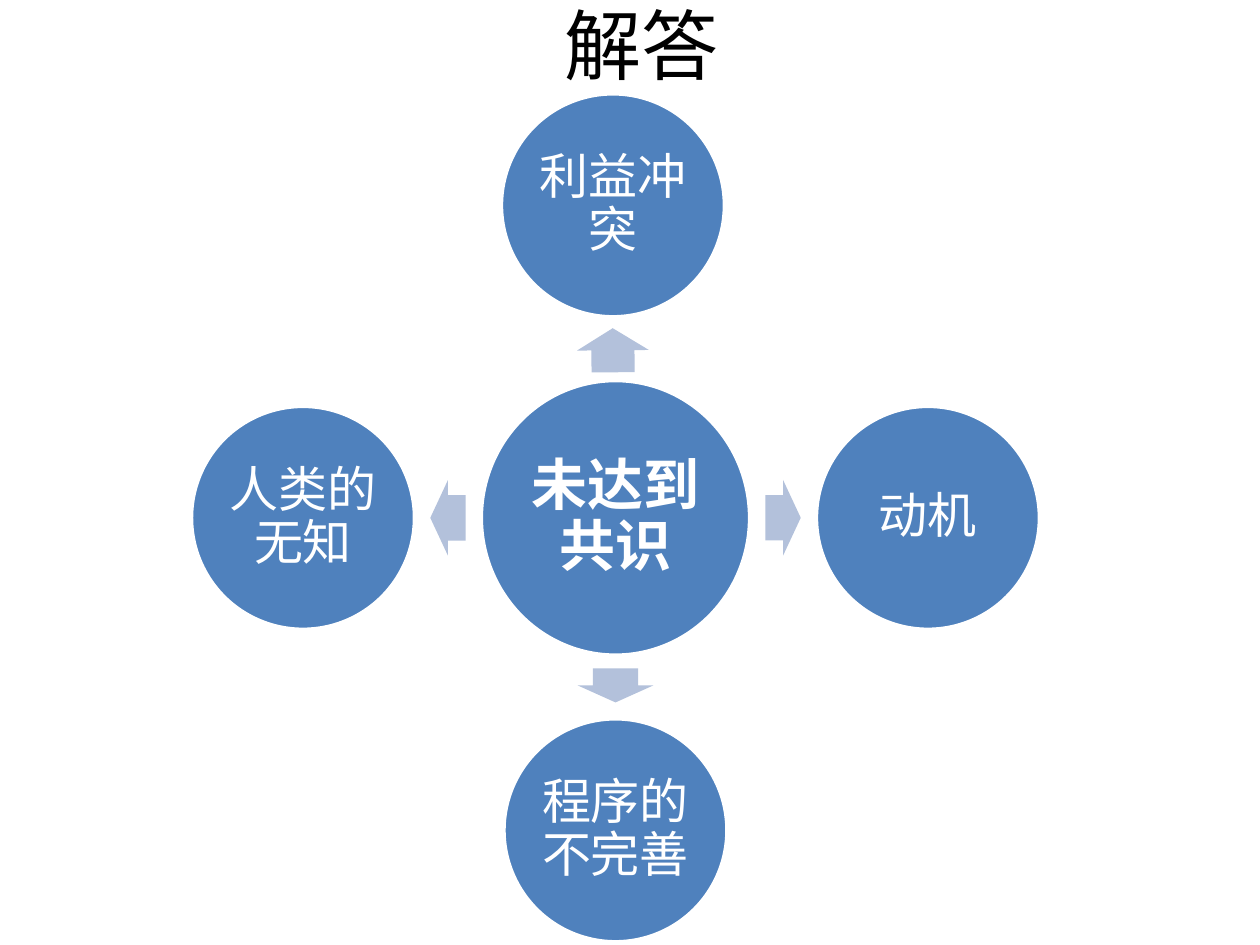
from pptx import Presentation
from pptx import util as u
from pptx.dml.color import RGBColor
from pptx.enum import shapes, text

FONT = "Calibri"
BLUE, PALE_BLUE, WHITE, BLACK = "4F81BD", "B3C1DB", "FFFFFF", "000000"
HUB_X, HUB_Y = 4.885, 4.11
ORBIT, ARROW_ORBIT = 2.48, 1.33
HUB_SIZE, CIRCLE_SIZE = (2.13, 2.18), (1.77, 1.77)

# label, direction x and y, sideways shift, arrow length and width, rotation
SPOKES = [
    ("利益冲突", 0, -1, -0.02, (0.35, 0.57), 269.5),
    ("动机", 1, 0, 0, (0.28, 0.6), 0),
    ("程序的不完善", 0, 1, 0, (0.27, 0.6), 90),
    ("人类的无知", -1, 0, 0, (0.28, 0.6), 180),
]


def color(value):
    return RGBColor.from_string(value)


def write(frame, words, size, font_color, bold=False):
    frame.word_wrap = True
    frame.vertical_anchor = text.MSO_ANCHOR.MIDDLE
    paragraph = frame.paragraphs[0]
    paragraph.alignment = text.PP_ALIGN.CENTER
    run = paragraph.add_run()
    run.text = words
    run.font.name = FONT
    run.font.size = u.Pt(size)
    run.font.bold = bold
    run.font.color.rgb = color(font_color)
    return paragraph


def add_centered(slide, kind, x, y, size, fill):
    """Add a preset shape whose middle is at x, y."""
    width, height = size
    shape = slide.shapes.add_shape(
        kind, u.Inches(x - width / 2), u.Inches(y - height / 2),
        u.Inches(width), u.Inches(height))
    shape.shadow.inherit = False
    shape.fill.solid()
    shape.fill.fore_color.rgb = color(fill)
    return shape


def add_circle(slide, x, y, size, words, font_size, bold=False):
    circle = add_centered(slide, shapes.MSO_SHAPE.OVAL, x, y, size, BLUE)
    circle.line.color.rgb = color(WHITE)
    circle.line.width = u.Pt(2)
    frame = circle.text_frame
    frame.margin_left = frame.margin_right = u.Inches(0.03)
    frame.margin_top = frame.margin_bottom = u.Inches(0.03)
    write(frame, words, font_size, WHITE, bold).line_spacing = 0.9


def add_arrow(slide, x, y, size, rotation):
    arrow = add_centered(slide, shapes.MSO_SHAPE.RIGHT_ARROW, x, y, size, PALE_BLUE)
    arrow.line.fill.background()
    arrow.adjustments[0] = 0.6
    arrow.adjustments[1] = 0.5
    arrow.rotation = rotation


def add_title(slide, words):
    title = slide.shapes.title
    title.left, title.top = u.Inches(0.59), u.Inches(-0.19)
    title.width, title.height = u.Inches(9), u.Inches(1.07)
    write(title.text_frame, words, 44, BLACK)


def main():
    presentation = Presentation()
    presentation.slide_width = u.Inches(10)
    presentation.slide_height = u.Inches(7.5)
    slide = presentation.slides.add_slide(presentation.slide_layouts[5])
    add_title(slide, "解答")
    add_circle(slide, HUB_X, HUB_Y, HUB_SIZE, "未达到共识", 32, bold=True)
    for label, dx, dy, shift, arrow_size, rotation in SPOKES:
        x = HUB_X + shift
        add_arrow(slide, x + dx * ARROW_ORBIT, HUB_Y + dy * ARROW_ORBIT,
                  arrow_size, rotation)
        add_circle(slide, x + dx * ORBIT, HUB_Y + dy * ORBIT,
                   CIRCLE_SIZE, label, 28)
    presentation.save("out.pptx")


if __name__ == "__main__":
    main()
